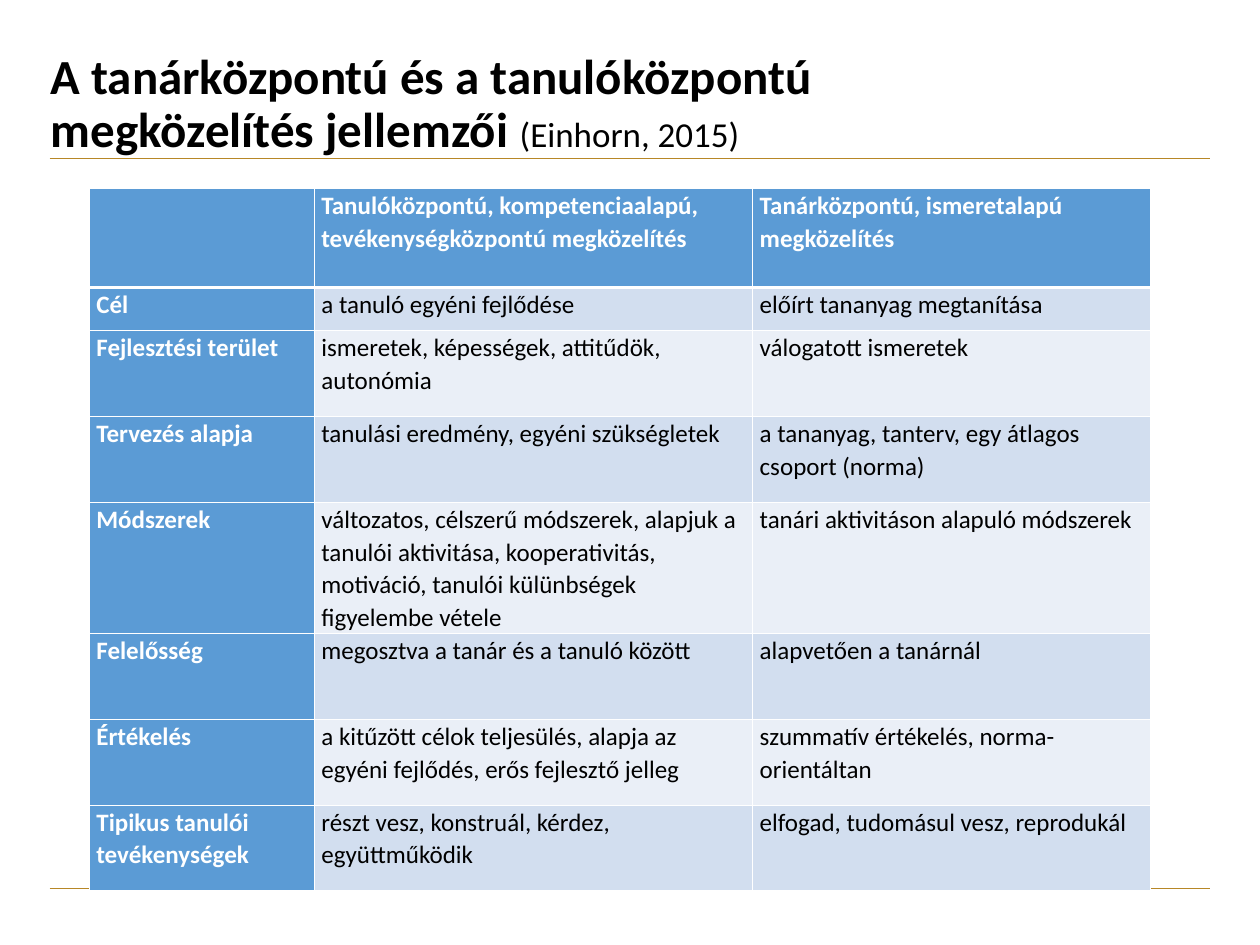
from lxml.etree import SubElement
from pptx import Presentation
from pptx.dml.color import RGBColor
from pptx.enum.shapes import MSO_CONNECTOR
from pptx.enum.text import MSO_ANCHOR, MSO_AUTO_SIZE, PP_ALIGN
from pptx.oxml.ns import qn
from pptx.util import Cm, Pt

# Content
TITLE = "A tanárközpontú és a tanulóközpontú megközelítés jellemzői "
SOURCE = "(Einhorn, 2015)"
ROWS = [
    ("", "Tanulóközpontú, kompetenciaalapú, tevékenységközpontú megközelítés",
     "Tanárközpontú, ismeretalapú megközelítés"),
    ("Cél", "a tanuló egyéni fejlődése", "előírt tananyag megtanítása"),
    ("Fejlesztési terület", "ismeretek, képességek, attitűdök, autonómia",
     "válogatott ismeretek"),
    ("Tervezés alapja", "tanulási eredmény, egyéni szükségletek",
     "a tananyag, tanterv, egy átlagos csoport (norma)"),
    ("Módszerek", "változatos, célszerű módszerek, alapjuk a tanulói aktivitása, "
     "kooperativitás, motiváció, tanulói külünbségek figyelembe vétele",
     "tanári aktivitáson alapuló módszerek"),
    ("Felelősség", "megosztva a tanár és a tanuló között", "alapvetően a tanárnál"),
    ("Értékelés", "a kitűzött célok teljesülés, alapja az egyéni fejlődés, "
     "erős fejlesztő jelleg", "szummatív értékelés, norma-orientáltan"),
    ("Tipikus tanulói tevékenységek", "részt vesz, konstruál, kérdez, együttműködik",
     "elfogad, tudomásul vesz, reprodukál"),
]

# Layout and colours
COL_WIDTHS = [6.35, 12.37, 11.23]
ROW_HEIGHTS = [2.79, 1.22, 2.42, 2.42, 3.7, 2.42, 2.42, 2.42]
RULE_TOPS = [4.47, 25.07]
HEAD, BANDS = "5B9BD5", ["EAEFF7", "D2DEEF"]
WHITE, BLACK, GOLD = "FFFFFF", "000000", "B78727"


def rgb(value):
    return RGBColor.from_string(value)


def style_run(r, size, color, bold):
    r.font.name = "Calibri"
    r.font.size = Pt(size)
    r.font.bold = bold
    r.font.color.rgb = rgb(color)


def add_rule(s, top):
    line = s.shapes.add_connector(MSO_CONNECTOR.STRAIGHT, Cm(1.4), Cm(top), Cm(34.16), Cm(top))
    line.line.color.rgb = rgb(GOLD)
    line.line.width = Pt(1)
    SubElement(line._element.spPr, qn("a:effectLst"))


def set_border(cell, side, width):
    ln = SubElement(cell._tc.get_or_add_tcPr(), qn(f"a:ln{side}"), w=str(Pt(width)))
    fill = SubElement(ln, qn("a:solidFill"))
    SubElement(fill, qn("a:srgbClr"), val=WHITE)


def fill_cell(cell, text, row, col):
    is_head = row == 0 or col == 0
    for side in "LRTB":
        thick = (row == 0 and side == "B") or (row == 1 and side == "T")
        set_border(cell, side, 3 if thick else 1)
    cell.fill.solid()
    cell.fill.fore_color.rgb = rgb(HEAD if is_head else BANDS[row % 2])
    cell.margin_left = cell.margin_right = Cm(0.19)
    cell.margin_top = cell.margin_bottom = 0
    p = cell.text_frame.paragraphs[0]
    p.text = text
    p.line_spacing = 1.07
    for r in p.runs:
        style_run(r, 20, WHITE if is_head else BLACK, is_head)


prs = Presentation()
prs.slide_width, prs.slide_height = Cm(35.56), Cm(26.67)
s = prs.slides.add_slide(prs.slide_layouts[5])

# Rules
for top in RULE_TOPS:
    add_rule(s, top)

# Title
title = s.shapes.title
title.left, title.top, title.width, title.height = Cm(1.07), Cm(1.3), Cm(22.4), Cm(3.35)
tf = title.text_frame
tf.word_wrap = True
tf.auto_size = MSO_AUTO_SIZE.NONE
tf.vertical_anchor = MSO_ANCHOR.MIDDLE
tf.margin_left = tf.margin_right = Cm(0.36)
tf.margin_top = tf.margin_bottom = Cm(0.18)
p = tf.paragraphs[0]
p.text = TITLE
p.alignment = PP_ALIGN.LEFT
p.line_spacing = 0.9
style_run(p.runs[0], 39.2, BLACK, True)
r = p.add_run()
r.text = SOURCE
style_run(r, 28, BLACK, False)

# Comparison table
table = s.shapes.add_table(len(ROWS), len(COL_WIDTHS), Cm(2.53), Cm(5.33),
                           Cm(sum(COL_WIDTHS)), Cm(sum(ROW_HEIGHTS))).table
for column, width in zip(table.columns, COL_WIDTHS):
    column.width = Cm(width)
for i, (height, texts) in enumerate(zip(ROW_HEIGHTS, ROWS)):
    table.rows[i].height = Cm(height)
    for j, text in enumerate(texts):
        fill_cell(table.cell(i, j), text, i, j)

prs.save("out.pptx")
